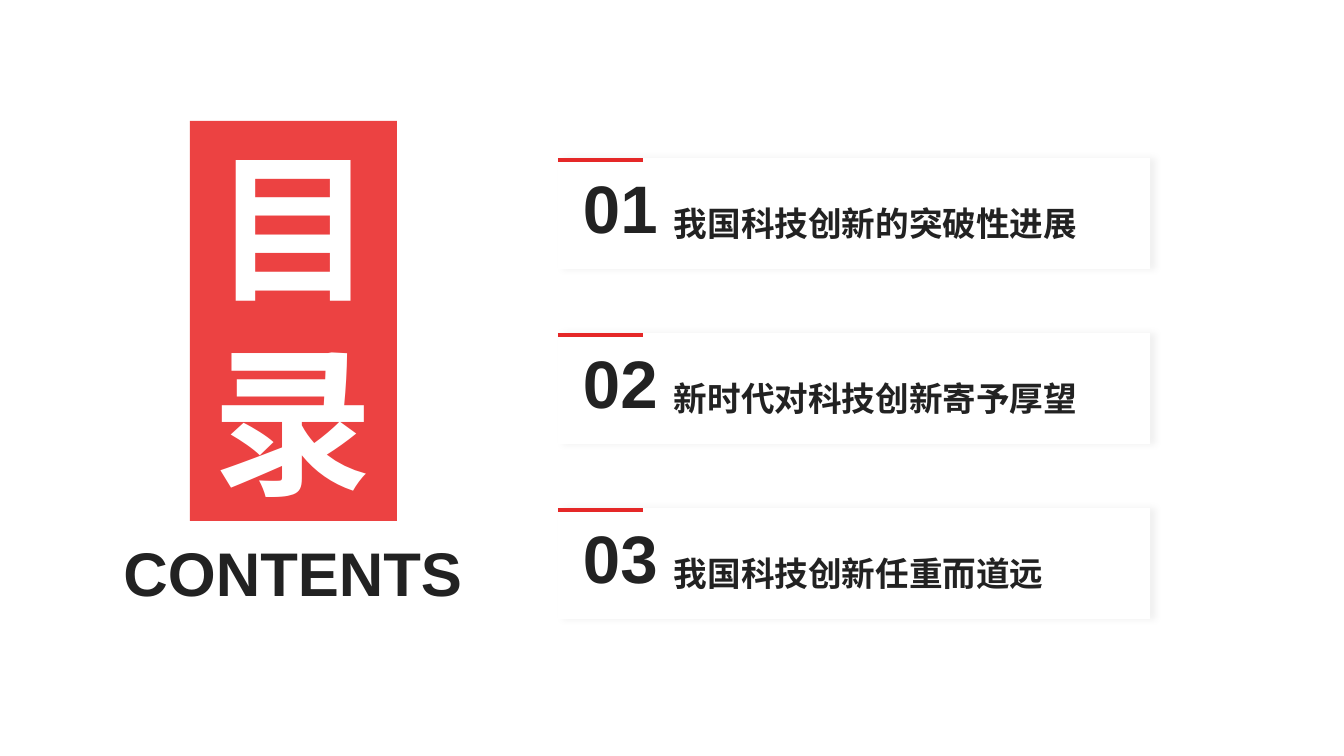
from lxml import etree
from pptx import Presentation, util as u
from pptx.dml.color import RGBColor
from pptx.enum import shapes, text
from pptx.oxml import ns

SCALE = 914400 / 100.8
INKS = {"dark": "222222", "red": "E52828", "coral": "EC4242", "white": "FFFFFF", "black": "000000"}
TOPICS = ["我国科技创新的突破性进展", "新时代对科技创新寄予厚望", "我国科技创新任重而道远"]
TOP, PITCH = 158, 175


def px(*sizes):
    return [u.Emu(round(size * SCALE)) for size in sizes]


class Deck:
    def __init__(self):
        self.deck = Presentation()
        self.deck.slide_width, self.deck.slide_height = px(1344, 756)
        self.slide = self.deck.slides.add_slide(self.deck.slide_layouts[5])
        self.font = "Arial"

    def letter(self, shape, words, size, ink="dark", align=text.PP_ALIGN.LEFT,
               anchor=text.MSO_ANCHOR.TOP, space=1.0):
        frame = shape.text_frame
        frame.word_wrap = True
        frame.auto_size = text.MSO_AUTO_SIZE.NONE
        frame.vertical_anchor = anchor
        frame.text = words
        line = frame.paragraphs[0]
        line.alignment = align
        line.line_spacing = space
        line.font.name = self.font
        line.font.size = u.Pt(size)
        line.font.bold = True
        line.font.color.rgb = RGBColor.from_string(INKS[ink])

    def title(self, words, box):
        shape = self.slide.shapes.title
        shape.left, shape.top, shape.width, shape.height = px(*box)
        self.letter(shape, words, 44, align=text.PP_ALIGN.CENTER,
                    anchor=text.MSO_ANCHOR.MIDDLE, space=0.9)

    def label(self, words, box, size, space):
        self.letter(self.slide.shapes.add_textbox(*px(*box)), words, size, space=space)

    def block(self, box, ink):
        shape = self.slide.shapes.add_shape(shapes.MSO_SHAPE.RECTANGLE, *px(*box))
        shape.shadow.inherit = False
        shape.fill.solid()
        shape.fill.fore_color.rgb = RGBColor.from_string(INKS[ink])
        shape.line.fill.background()
        return shape

    def shade(self, shape, blur, gap, alpha):
        glow = shape.element.spPr.find(ns.qn("a:effectLst"))
        outer = etree.SubElement(glow, ns.qn("a:outerShdw"), blurRad=str(u.Pt(blur)),
                                 dist=str(u.Pt(gap)), dir="0", algn="l", rotWithShape="0")
        ink = etree.SubElement(outer, ns.qn("a:srgbClr"), val=INKS["black"])
        etree.SubElement(ink, ns.qn("a:alpha"), val=str(alpha * 1000))

    def rule(self, left, top, width, ink):
        line = self.slide.shapes.add_connector(
            shapes.MSO_CONNECTOR.STRAIGHT, *px(left, top, left + width, top))
        line.line.color.rgb = RGBColor.from_string(INKS[ink])
        line.line.width = u.Pt(3)
        etree.SubElement(line.element.spPr, ns.qn("a:effectLst"))

    def card(self, mark, words, top):
        panel = self.block((558, top, 592, 111), "white")
        self.shade(panel, 5, 3, 6)
        self.rule(558, top + 2, 85, "red")
        self.label(mark, (573, top + 22, 116, 94), 48, 0.75)
        self.label(words, (664, top + 20, 486, 94), 24, 1.5)


def main():
    deck = Deck()
    deck.title("CONTENTS", (109, 538, 368, 78))
    for row, words in enumerate(TOPICS):
        deck.card(f"{row + 1:02}", words, TOP + row * PITCH)
    banner = deck.block((190, 121, 207, 400), "coral")
    deck.letter(banner, "目录", 115, "white", text.PP_ALIGN.CENTER, text.MSO_ANCHOR.MIDDLE)
    deck.deck.save("out.pptx")


if __name__ == "__main__":
    main()
